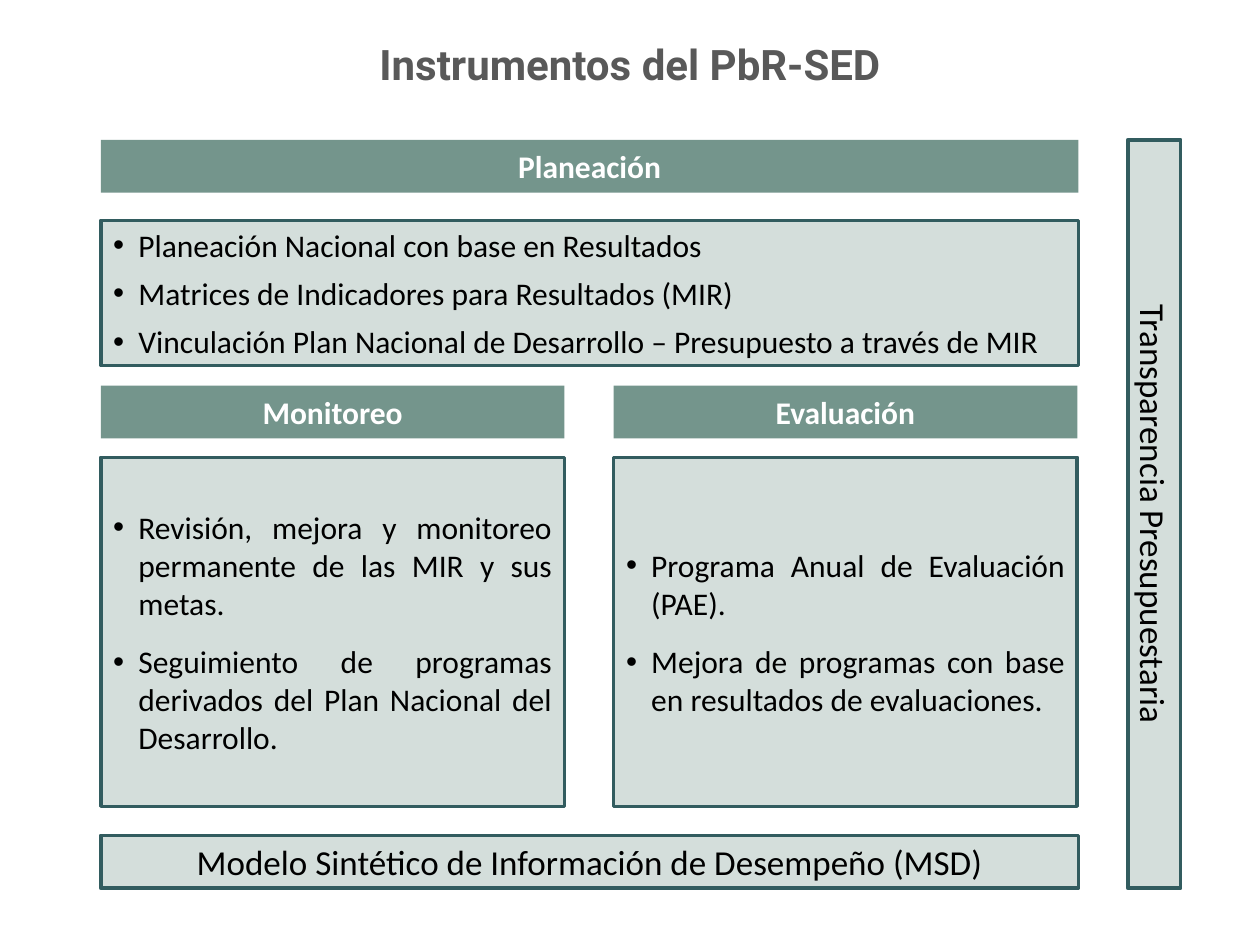
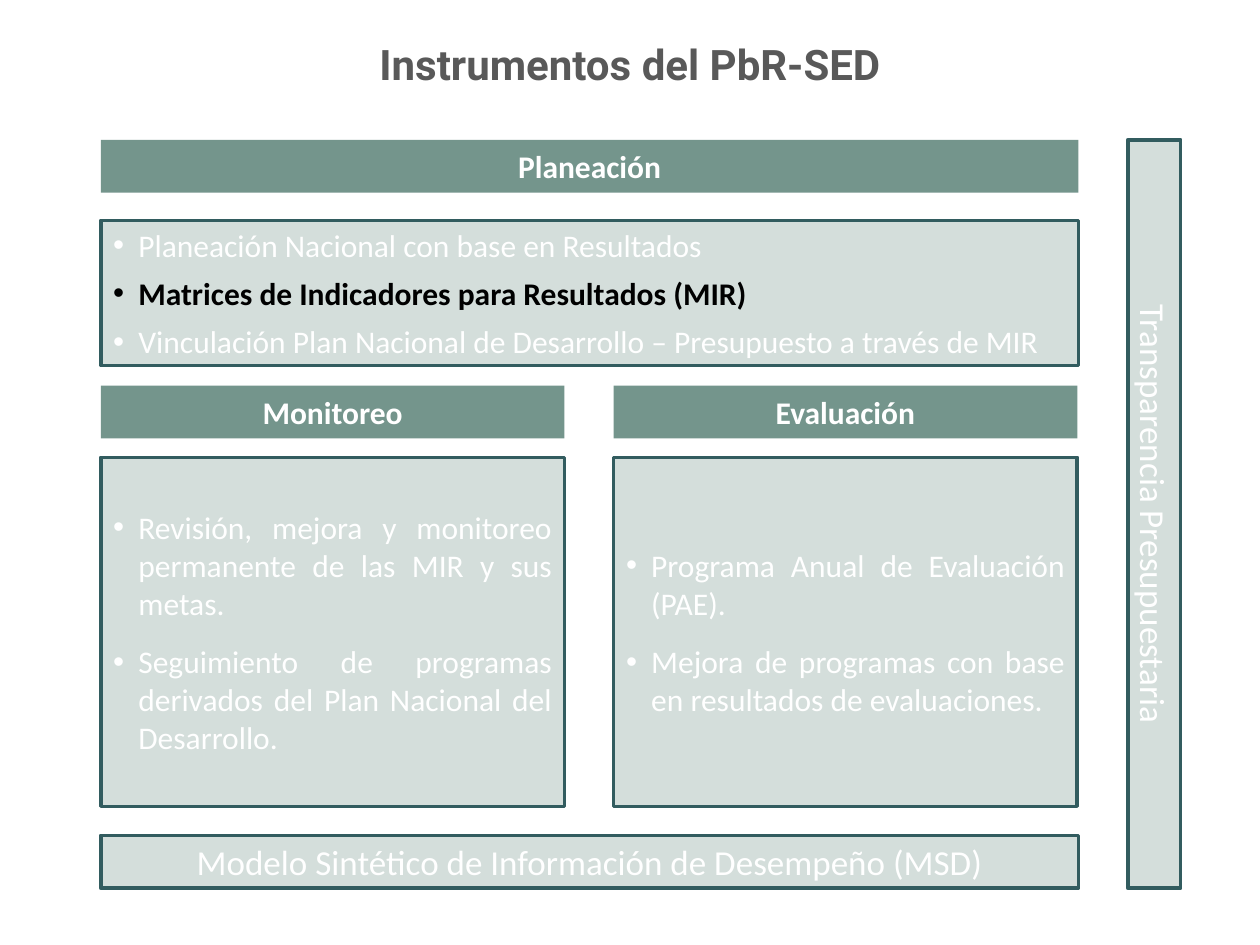
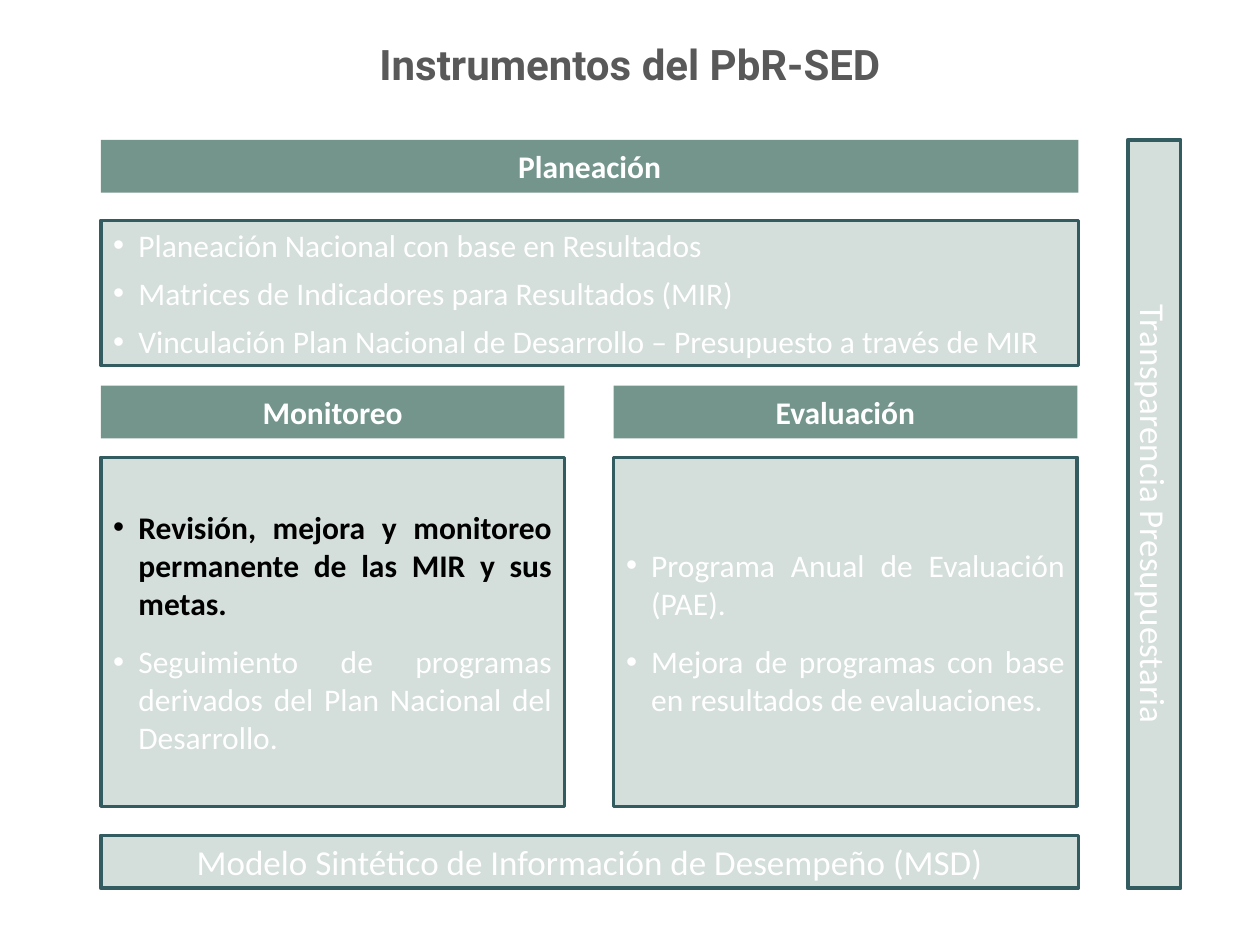
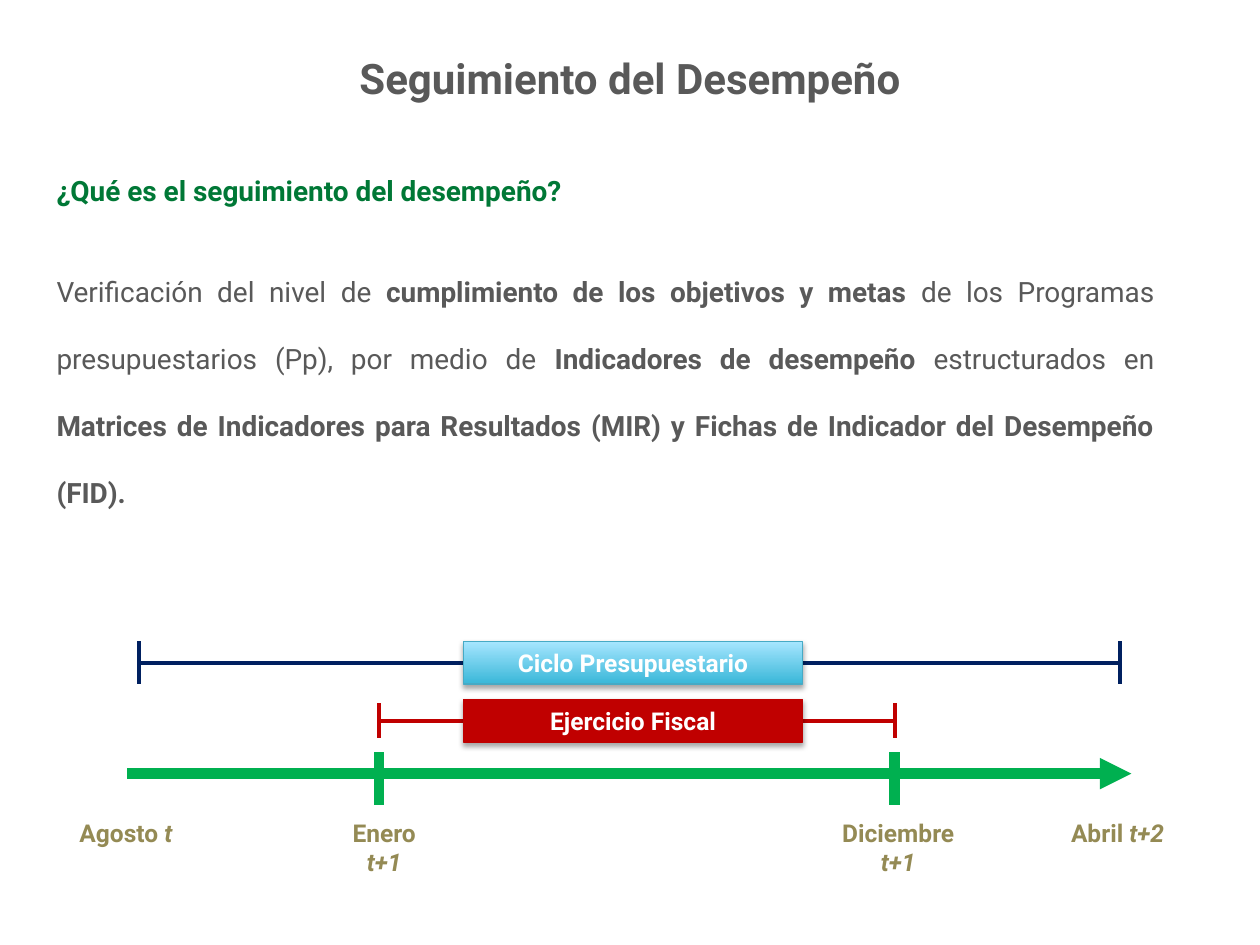
from dataclasses import dataclass

from lxml import etree
from pptx import Presentation
from pptx.dml.color import RGBColor
from pptx.enum.shapes import MSO_CONNECTOR, MSO_SHAPE
from pptx.enum.text import MSO_ANCHOR, PP_ALIGN
from pptx.oxml.ns import qn
from pptx.util import Inches, Pt

RECT = MSO_SHAPE.RECTANGLE
LINE = MSO_CONNECTOR.STRAIGHT
CENTER, JUSTIFY = PP_ALIGN.CENTER, PP_ALIGN.JUSTIFY
TOP, MIDDLE = MSO_ANCHOR.TOP, MSO_ANCHOR.MIDDLE


@dataclass(frozen=True)
class Theme:
    head: str = "Roboto"
    body: str = "Calibri"
    gray: str = "595959"
    ink: str = "000000"
    white: str = "FFFFFF"
    band: str = "74958C"
    panel: str = "D4DEDB"
    edge: str = "325C5F"
    query: str = "007836"
    time: str = "00B050"
    cycle: str = "002060"
    sky: str = "39B7D8"
    pale: str = "A7E6FF"
    rim: str = "46AAC5"
    fiscal: str = "C00000"
    date: str = "948A54"
    title: int = 24
    large: int = 20
    text: int = 18
    lead: int = 16
    small: int = 14


T = Theme()

# The slide is a grid of one-inch cells: 10 columns by 7.5 rows.
COLS, ROWS = 10, 7.5
LEFT, FULL = 0.8, 7.76
HALF, STEP = 3.68, 4.07
BAR = 0.42
TOP_ROW, LAST_ROW = 1.11, 6.63

PLAN = ["Planeación Nacional con base en Resultados",
        "Matrices de Indicadores para Resultados (MIR)",
        "Vinculación Plan Nacional de Desarrollo – Presupuesto a través de MIR"]
PAIRS = [
    ("Monitoreo",
     ["Revisión, mejora y monitoreo permanente de las MIR y sus metas.",
      "Seguimiento de programas derivados del Plan Nacional del Desarrollo."]),
    ("Evaluación",
     ["Programa Anual de Evaluación (PAE).",
      "Mejora de programas con base en resultados de evaluaciones."]),
]


def rgb(code):
    return RGBColor.from_string(code)


def cells(*sizes):
    return [Inches(size) for size in sizes]


def write(para, text, size, color, font=T.body, bold=False, italic=False):
    run = para.add_run()
    run.text = text
    face = run.font
    face.name, face.size, face.bold, face.italic = font, Pt(size), bold, italic
    face.color.rgb = rgb(color)


def text_box(slide, area, anchor=TOP, align=CENTER):
    """Add a wrapping text box and return its text frame."""
    frame = slide.shapes.add_textbox(*cells(*area)).text_frame
    frame.word_wrap = True
    frame.vertical_anchor = anchor
    frame.paragraphs[0].alignment = align
    return frame


def add_title(slide, text, top, height):
    frame = text_box(slide, (0.5, top, COLS - 1, height), MIDDLE)
    write(frame.paragraphs[0], text, T.title, T.gray, T.head, bold=True)


def box(slide, area, fill, edge=None, width=2):
    shape = slide.shapes.add_shape(RECT, *cells(*area))
    shape.shadow.inherit = False
    shape.fill.solid()
    shape.fill.fore_color.rgb = rgb(fill)
    if edge:
        shape.line.color.rgb = rgb(edge)
        shape.line.width = Pt(width)
    else:
        shape.line.fill.background()
    frame = shape.text_frame
    frame.word_wrap = True
    frame.vertical_anchor = MIDDLE
    frame.paragraphs[0].alignment = CENTER
    return shape


def label(shape, *style, **more):
    write(shape.text_frame.paragraphs[0], *style, **more)


def header(slide, area, text):
    label(box(slide, area, T.band), text, T.text, T.white, bold=True)


def tone(text, focus):
    """Colour of a text: all dark without a focus, else only the focus."""
    return T.ink if focus in (None, text) else T.white


def bullet(para):
    props = para._p.get_or_add_pPr()
    props.set("marL", str(Inches(0.2)))
    props.set("indent", str(-Inches(0.2)))
    etree.SubElement(props, qn("a:buFont"), typeface="Arial")
    etree.SubElement(props, qn("a:buChar"), char="•")


def bullets(slide, area, items, gap, focus):
    frame = box(slide, area, T.panel, T.edge).text_frame
    for i, item in enumerate(items):
        para = frame.add_paragraph() if i else frame.paragraphs[0]
        para.alignment, para.level = JUSTIFY, 3
        para.space_after = Pt(gap)
        bullet(para)
        write(para, item, T.text, tone(item, focus), bold=item == focus)


def note(slide, area, text, focus):
    shape = box(slide, area, T.panel, T.edge)
    label(shape, text, T.large, tone(text, focus))
    return shape


def tools(deck, focus=None):
    """Add the overview of instruments, with one item in focus."""
    slide = deck.slides.add_slide(deck.slide_layouts[6])
    add_title(slide, "Instrumentos del PbR-SED", 0.09, 0.83)
    header(slide, (LEFT, TOP_ROW, FULL, BAR), "Planeación")
    bullets(slide, (LEFT, 1.75, FULL, 1.15), PLAN, 6, focus)
    for i, (name, items) in enumerate(PAIRS):
        left = LEFT + i * STEP
        header(slide, (left, 3.06, HALF, BAR), name)
        bullets(slide, (left, 3.63, HALF, 2.77), items, 12, focus)
    note(slide, (LEFT, LAST_ROW, FULL, BAR),
         "Modelo Sintético de Información de Desempeño (MSD)", focus)
    side = note(slide, (6.19, 3.87, LAST_ROW + BAR - TOP_ROW, BAR),
                "Transparencia Presupuestaria", focus)
    side.rotation = 90


def line(slide, start, end, color, width, arrow=False):
    link = slide.shapes.add_connector(LINE, *cells(*start, *end))
    link.line.color.rgb = rgb(color)
    link.line.width = Pt(width)
    if arrow:
        etree.SubElement(link.line._ln, qn("a:tailEnd"), type="triangle")
    etree.SubElement(link._element.spPr, qn("a:effectLst"))


def tick(slide, x, top, bottom, color, width):
    line(slide, (x, top), (x, bottom), color, width)


def shade(shape):
    """Give a shape a soft shadow below it."""
    effects = shape._element.spPr.find(qn("a:effectLst"))
    cast = etree.SubElement(effects, qn("a:outerShdw"), blurRad=str(Pt(3.1)),
                            dist=str(Pt(1.8)), dir="5400000", rotWithShape="0")
    color = etree.SubElement(cast, qn("a:srgbClr"), val=T.ink)
    etree.SubElement(color, qn("a:alpha"), val="35000")


def span(slide, ends, y, half, color, text, fill, edge):
    """Add a line with end ticks and a named box on its middle."""
    first, last = ends
    line(slide, (first, y), (last, y), color, 2.25)
    for x in ends:
        tick(slide, x, y - half, y + half, color, 2.25)
    shape = box(slide, (3.68, y - 0.17, 2.69, 0.34), fill, edge, 0.75)
    shade(shape)
    label(shape, text, T.small, T.white, T.head, bold=True)
    return shape


def blend(shape, low, high):
    shape.fill.gradient()
    shape.fill.gradient_angle = 90
    for stop, color in zip(shape.fill.gradient_stops, (low, high)):
        stop.color.rgb = rgb(color)


def date(slide, mid, month, year, width=1.01):
    frame = text_box(slide, (mid - width / 2, 6.44, width, 0.57))
    para = frame.paragraphs[0]
    write(para, month + " ", T.small, T.date, T.head, bold=True)
    write(para, year, T.small, T.date, T.head, bold=True, italic=True)


def timeline(slide):
    outer, inner = (1.1, 8.89), (3.01, 7.1)
    line(slide, (1.01, 6.14), (8.98, 6.14), T.time, 6, arrow=True)
    for x in inner:
        tick(slide, x, 5.97, 6.39, T.time, 6)
    cycle = span(slide, outer, 5.26, 0.17, T.cycle,
                 "Ciclo Presupuestario", T.sky, T.rim)
    blend(cycle, T.sky, T.pale)
    span(slide, inner, 5.72, 0.14, T.fiscal,
         "Ejercicio Fiscal", T.fiscal, T.fiscal)
    date(slide, 1.0, "Agosto", "t")
    date(slide, 3.05, "Enero", "t+1")
    date(slide, 7.13, "Diciembre", "t+1", 1.27)
    date(slide, 8.87, "Abril", "t+2")


def follow(deck):
    """Add the slide that explains performance tracking."""
    slide = deck.slides.add_slide(deck.slide_layouts[6])
    add_title(slide, "Seguimiento del Desempeño", 0, 1.24)
    frame = text_box(slide, (0.35, 1.33, 8.91, 3.6), align=JUSTIFY)
    write(frame.paragraphs[0], "¿Qué es el seguimiento del desempeño?",
          T.lead, T.query, T.head, bold=True)
    para = frame.add_paragraph()
    para.alignment, para.line_spacing = JUSTIFY, 2.0
    para.space_before = Pt(19)
    parts = [
        "Verificación del nivel de ",
        "cumplimiento de los objetivos y metas ",
        "de los Programas presupuestarios (Pp), por medio de ",
        "Indicadores de desempeño ",
        "estructurados en ",
        "Matrices de Indicadores para Resultados (MIR) y Fichas de Indicador "
        "del Desempeño (FID).",
    ]
    for i, part in enumerate(parts):
        write(para, part, T.lead, T.gray, T.head, bold=i % 2 == 1)
    timeline(slide)


def main():
    deck = Presentation()
    deck.slide_width, deck.slide_height = cells(COLS, ROWS)
    for focus in (None, PLAN[1], PAIRS[0][1][0]):
        tools(deck, focus)
    follow(deck)
    deck.save("out.pptx")


if __name__ == "__main__":
    main()
